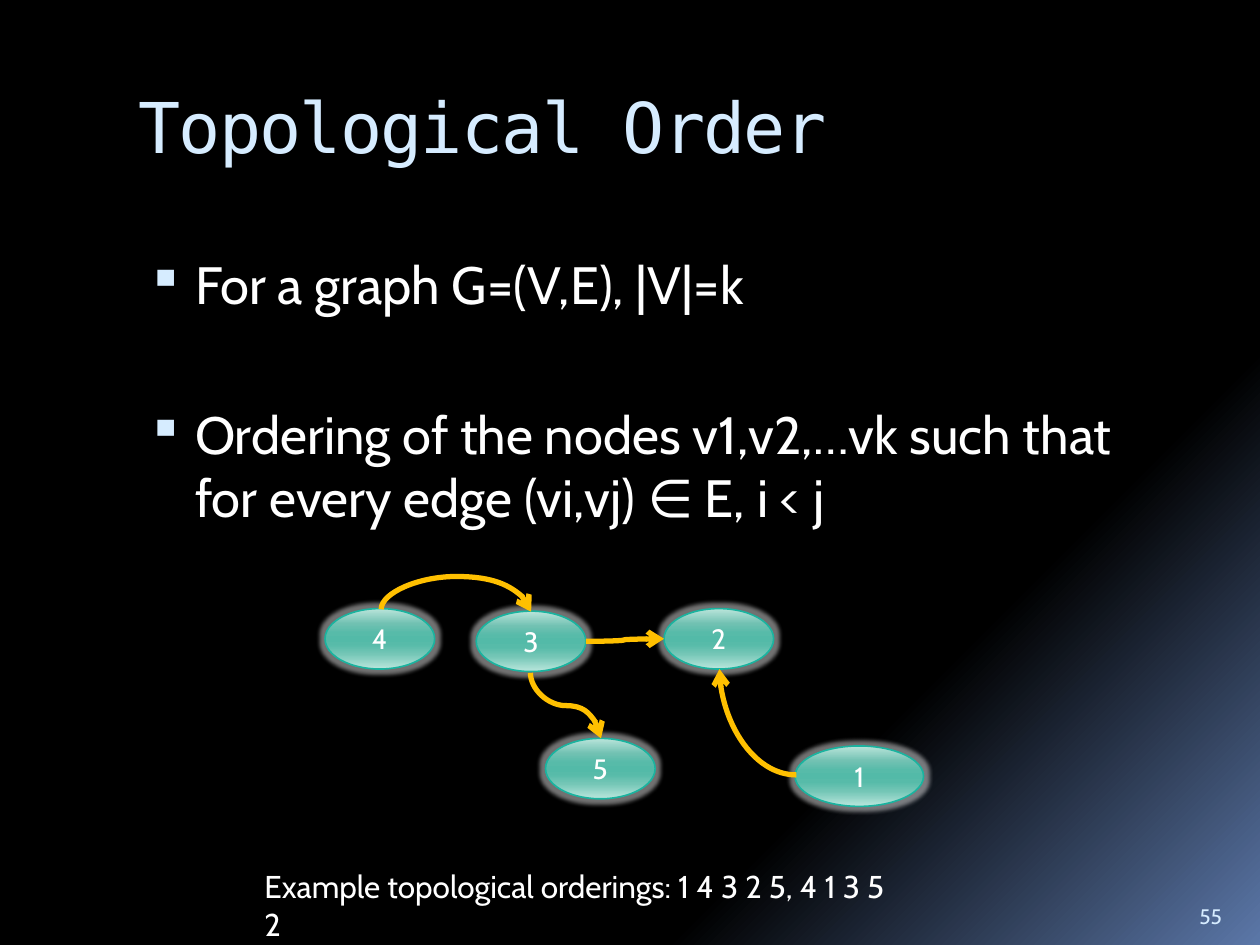
from lxml.etree import SubElement
from pptx import Presentation
from pptx.dml.color import RGBColor
from pptx.enum.shapes import MSO_CONNECTOR, MSO_SHAPE
from pptx.enum.text import MSO_ANCHOR, PP_ALIGN
from pptx.oxml.ns import qn
from pptx.util import Inches, Pt

COLORS = {
    "heading": "D6ECFF",
    "text": "FFFFFF",
    "node_line": "1AB39F",
    "edge": "FFC000",
}
BACKGROUND_STOPS = [(65, "000000"), (73, "000000"), (100, "5B77A8")]
NODE_STOPS = [(0, "BBE5DB"), (25, "71C1B2"), (40, "57BBA9"), (50, "53BAA8"),
              (60, "57BBA9"), (75, "74C6B6"), (100, "B9E6DC")]
BODY_FONT = "Cabin"
TITLE_FONT = "DejaVu Sans Mono"

# Node label: left, top, width
NODES = {
    "4": (2.58, 4.83, 0.87),
    "3": (3.78, 4.85, 0.87),
    "2": (5.27, 4.83, 0.87),
    "1": (6.31, 5.92, 1.02),
    "5": (4.33, 5.86, 0.87),
}
NODE_HEIGHT = 0.48

# Connection sites of an ellipse
TOP, LEFT, BOTTOM, RIGHT = 0, 2, 4, 6

# Start node and site, end node and site, frame, rotation, flip, bend
EDGES = [
    ("1", LEFT, "2", BOTTOM, (5.71, 5.31, 0.61, 0.84), 180, None, None),
    ("3", RIGHT, "2", LEFT, (4.65, 5.07, 0.62, 0.02), 0, "flipV", 0.48),
    ("4", TOP, "3", TOP, (3.61, 4.25, 0.02, 1.19), 270, "flipH", -12.95),
    ("3", BOTTOM, "5", TOP, (4.23, 5.32, 0.52, 0.56), 270, "flipH", 0.5),
]


def add_xml(parent, tag, **attributes):
    return SubElement(parent, qn(tag), {key: str(value) for key, value in attributes.items()})


def set_gradient(fill, parent, stops, angle):
    """Replace the fill inside parent by a linear gradient (clockwise angle)."""
    fill.background()
    empty_fill = next(parent.iter(qn("a:noFill")))
    gradient = empty_fill.makeelement(qn("a:gradFill"), {"rotWithShape": "1"})
    stop_list = add_xml(gradient, "a:gsLst")
    for position, color in stops:
        stop = add_xml(stop_list, "a:gs", pos=position * 1000)
        add_xml(stop, "a:srgbClr", val=color)
    add_xml(gradient, "a:lin", ang=angle * 60000, scaled=0)
    empty_fill.getparent().replace(empty_fill, gradient)


def write_text(para, text, size=16, font=BODY_FONT, color="text", spacing=None):
    span = para.add_run()
    span.text = text
    span.font.size = Pt(size)
    span.font.name = font
    span.font.color.rgb = RGBColor.from_string(COLORS[color])
    if spacing is not None:
        span.font._element.set("spc", str(spacing * 100))


def add_box(slide, left, top, width, height, anchor=MSO_ANCHOR.TOP):
    box = slide.shapes.add_textbox(Inches(left), Inches(top), Inches(width), Inches(height))
    box.text_frame.word_wrap = True
    box.text_frame.vertical_anchor = anchor
    return box.text_frame


def add_bullet(para, text, space_before):
    para.space_before = Pt(space_before)
    properties = para._p.get_or_add_pPr()
    properties.set("marL", str(Inches(0.45)))
    properties.set("indent", str(Inches(-0.38)))
    add_xml(add_xml(properties, "a:buClr"), "a:srgbClr", val=COLORS["heading"])
    add_xml(properties, "a:buSzPct", val=95000)
    add_xml(properties, "a:buChar", char="▪")
    write_text(para, text, size=30)


def add_node(slide, label, left, top, width):
    node = slide.shapes.add_shape(MSO_SHAPE.OVAL, Inches(left), Inches(top),
                                  Inches(width), Inches(NODE_HEIGHT))
    set_gradient(node.fill, node._element.spPr, NODE_STOPS, 90)
    node.line.color.rgb = RGBColor.from_string(COLORS["node_line"])
    node.line.width = Pt(0.94)
    # Soft pale halo in place of the theme shadow
    node.shadow.inherit = False
    effects = node._element.spPr.find(qn("a:effectLst"))
    halo = add_xml(add_xml(effects, "a:glow", rad=Pt(5)), "a:srgbClr", val=COLORS["text"])
    add_xml(halo, "a:alpha", val=45000)
    node.text_frame.vertical_anchor = MSO_ANCHOR.MIDDLE
    para = node.text_frame.paragraphs[0]
    para.alignment = PP_ALIGN.CENTER
    write_text(para, label)
    return node


def add_edge(slide, start, start_site, end, end_site, frame, rotation, flip, bend):
    left, top, width, height = (Inches(value) for value in frame)
    edge = slide.shapes.add_connector(MSO_CONNECTOR.CURVE, left, top, left + width, top + height)
    edge.line.color.rgb = RGBColor.from_string(COLORS["edge"])
    edge.line.width = Pt(3)
    add_xml(edge.line._get_or_add_ln(), "a:tailEnd", type="arrow")
    properties = edge._element.spPr
    add_xml(properties, "a:effectLst")

    # Curve direction and bend
    transform = properties.find(qn("a:xfrm"))
    transform.set("rot", str(rotation * 60000))
    if flip:
        transform.set(flip, "1")
    geometry = properties.find(qn("a:prstGeom"))
    if bend is None:
        geometry.set("prst", "curvedConnector2")
    else:
        add_xml(geometry.find(qn("a:avLst")), "a:gd", name="adj1",
                fmla=f"val {round(bend * 100000)}")

    # Join to the ellipse sites
    joints = next(edge._element.iter(qn("p:cNvCxnSpPr")))
    add_xml(joints, "a:stCxn", id=start.shape_id, idx=start_site)
    add_xml(joints, "a:endCxn", id=end.shape_id, idx=end_site)


def main():
    deck = Presentation()
    deck.slide_width, deck.slide_height = Inches(10), Inches(7.5)
    page = deck.slides.add_slide(deck.slide_layouts[6])
    set_gradient(page.background.fill, page._element, BACKGROUND_STOPS, 45)

    # Title
    title = add_box(page, 1, 0.56, 8.5, 1)
    title.margin_top = Inches(0.1)
    write_text(title.paragraphs[0], "Topological Order", size=40, font=TITLE_FONT,
               color="heading", spacing=-1)

    # Definition
    body = add_box(page, 1, 1.95, 8.5, 5)
    add_bullet(body.paragraphs[0], "For a graph G=(V,E), |V|=k", 0)
    add_bullet(body.add_paragraph(), "Ordering of the nodes v1,v2,…vk such that "
               "for every edge (vi,vj) ∈ E, i < j", 50)

    # Slide number
    number = add_box(page, 9.42, 7.02, 0.5, 0.4, anchor=MSO_ANCHOR.BOTTOM)
    write_text(number.paragraphs[0], "55", size=12, color="heading")

    # Graph
    nodes = {label: add_node(page, label, *place) for label, place in NODES.items()}
    for start, start_site, end, end_site, *curve in EDGES:
        add_edge(page, nodes[start], start_site, nodes[end], end_site, *curve)

    # Example
    example = add_box(page, 2, 6.83, 5.22, 0.4)
    write_text(example.paragraphs[0],
               "Example topological orderings: 1 4 3 2 5, 4 1 3 5 2", size=18)

    deck.save("out.pptx")


if __name__ == "__main__":
    main()
